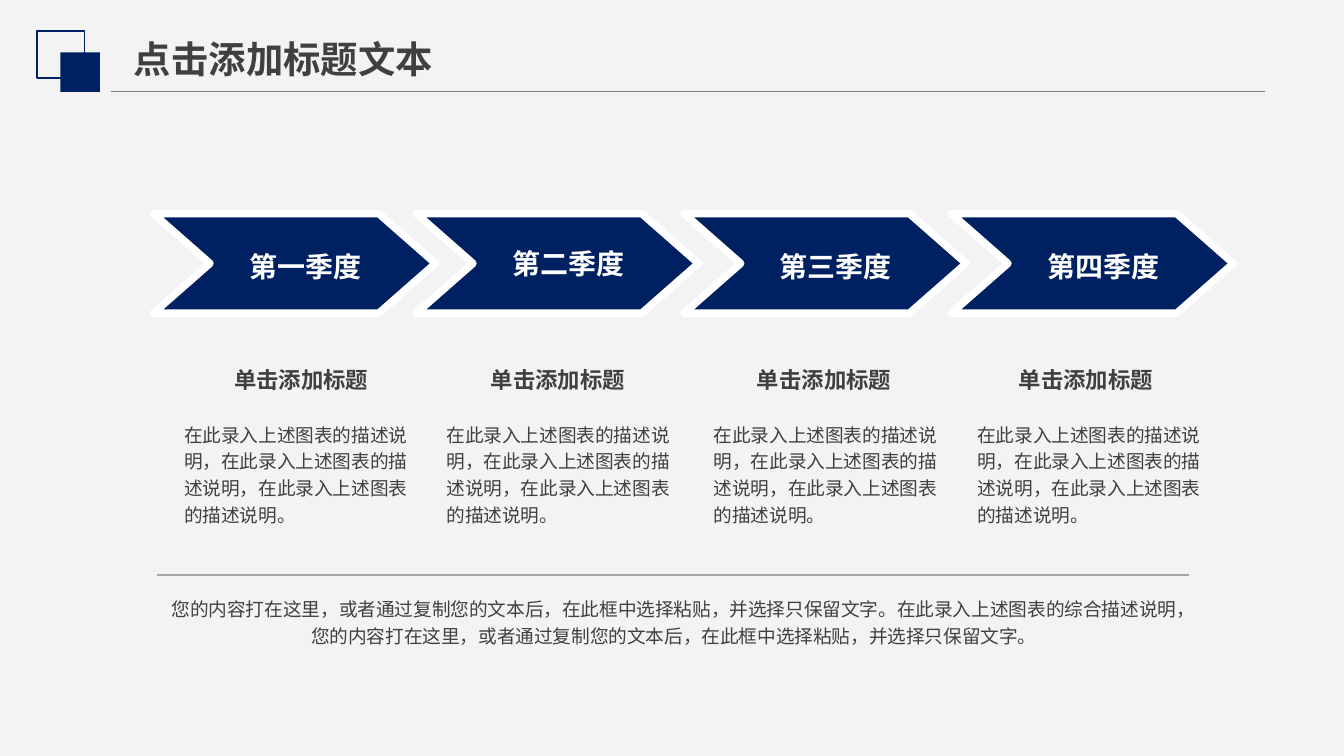
from lxml.etree import SubElement
from pptx import Presentation
from pptx.dml.color import RGBColor
from pptx.enum.shapes import MSO_CONNECTOR, MSO_SHAPE
from pptx.enum.text import MSO_ANCHOR, MSO_AUTO_SIZE, PP_ALIGN
from pptx.oxml.ns import qn
from pptx.util import Cm, Pt

NAVY, WHITE, INK = "002161", "FFFFFF", "404040"
SANS = "Noto Sans CJK SC"
HEADING = "单击添加标题"
DETAIL = "在此录入上述图表的描述说明，" * 2 + "在此录入上述图表的描述说明。"
SUMMARY = (
    "您的内容打在这里，或者通过复制您的文本后，在此框中选择粘贴，并选择只保留文字。"
    "在此录入上述图表的综合描述说明，"
    "您的内容打在这里，或者通过复制您的文本后，在此框中选择粘贴，并选择只保留文字。"
)
QUARTERS = [
    ("第一季度", 2.9, 4.22, 3.3, 1.2),
    ("第二季度", 7.87, 9.07, 8.26, 1.0),
    ("第三季度", 12.93, 14.1, 13.31, 1.2),
    ("第四季度", 17.98, 19.05, 18.29, 1.2),
]


def paint(color_format, value):
    """Set a solid fill or a font colour from a hex string."""
    color_format.rgb = RGBColor.from_string(value)


def write(box, text, size=10, color=INK, font=SANS, bold=False, align=PP_ALIGN.LEFT,
          spacing=1.0, anchor=MSO_ANCHOR.TOP, wrap=True, margins=(0.18, 0.1)):
    """Fill a box with one formatted paragraph."""
    frame = box.text_frame
    frame.word_wrap, frame.auto_size = wrap, MSO_AUTO_SIZE.NONE
    frame.vertical_anchor = anchor
    frame.margin_left = frame.margin_right = Cm(margins[0])
    frame.margin_top = frame.margin_bottom = Cm(margins[1])
    para = frame.paragraphs[0]
    para.alignment, para.line_spacing = align, spacing
    span = para.add_run()
    span.text = text
    span.font.size, span.font.bold = Pt(size), bold
    paint(span.font.color, color)
    span.font.name = font
    SubElement(span.font._element, qn("a:ea"), typeface=SANS)


def add_text(page, left, top, width, height, text, **style):
    """Add a text box and write in it."""
    box = page.shapes.add_textbox(Cm(left), Cm(top), Cm(width), Cm(height))
    write(box, text, **style)


def add_rule(page, left, top, width, color):
    """Draw a thin horizontal rule."""
    rule = page.shapes.add_connector(
        MSO_CONNECTOR.STRAIGHT, Cm(left), Cm(top), Cm(left + width), Cm(top))
    paint(rule.line.color, color)
    rule.line.width = Pt(0.75)
    SubElement(rule._element.spPr, qn("a:effectLst"))


def add_square(page, left, top, side, filled):
    """Draw a filled or an outlined navy square."""
    square = page.shapes.add_shape(
        MSO_SHAPE.RECTANGLE, Cm(left), Cm(top), Cm(side), Cm(side))
    square.shadow.inherit = False
    if filled:
        square.fill.solid()
        paint(square.fill.fore_color, NAVY)
        square.line.fill.background()
    else:
        square.fill.background()
        paint(square.line.color, NAVY)
        square.line.width = Pt(1)


def add_header(page, left, top, width, height):
    """Place the squares, the title and the rule under it."""
    add_square(page, left, top, 0.9, False)
    add_square(page, left + 0.44, top + 0.41, 0.75, True)
    title = page.shapes.title
    title.left, title.top = Cm(left + 1.58), Cm(top - 0.02)
    title.width, title.height = Cm(6.22), Cm(1.12)
    write(title, "点击添加标题文本", size=20, bold=True, wrap=False, margins=(0.25, 0.13))
    add_rule(page, left + 1.4, top + height, width - 1.4, "808080")


def add_arrow(page, left, top, width, height, label, spacing):
    """Draw a notched arrow with its label."""
    notch = 1.07
    right, middle, bottom = left + width, top + height / 2, top + height
    outline = page.shapes.build_freeform(Cm(left), Cm(top))
    corners = [(right - notch, top), (right, middle), (right - notch, bottom),
               (left, bottom), (left + notch, middle)]
    outline.add_line_segments([(Cm(x), Cm(y)) for x, y in corners])
    arrow = outline.convert_to_shape()
    arrow.shadow.inherit = False
    arrow.fill.solid()
    paint(arrow.fill.fore_color, NAVY)
    paint(arrow.line.color, WHITE)
    arrow.line.width = Pt(4)
    SubElement(arrow.line._ln, qn("a:round"))
    add_text(page, left + 0.62, top + 0.46, 4.5, 0.96, label, size=15, color=WHITE,
             font="Arial", bold=True, align=PP_ALIGN.CENTER, spacing=spacing,
             anchor=MSO_ANCHOR.MIDDLE, margins=(0.25, 0.13))


def add_quarters(page, top):
    """Place the four arrows with their headings and details."""
    for label, arrow_left, heading_left, detail_left, spacing in QUARTERS:
        add_arrow(page, arrow_left, top, 5.33, 1.88, label, spacing)
        add_text(page, heading_left, top + 2.79, 2.95, 0.71, HEADING, size=12,
                 bold=True, align=PP_ALIGN.CENTER, wrap=False)
        add_text(page, detail_left, top + 3.78, 4.64, 2.24, DETAIL, spacing=1.2)


def add_summary(page, left, top, width, height):
    """Place the closing rule and the summary below it."""
    add_rule(page, left, top, width, "A6A6A6")
    add_text(page, left - 0.02, top + 0.25, width + 0.06, height, SUMMARY,
             align=PP_ALIGN.CENTER, spacing=1.2)


def main():
    """Build the slide and save the deck."""
    deck = Presentation()
    deck.slide_width, deck.slide_height = Cm(25.4), Cm(14.29)
    page = deck.slides.add_slide(deck.slide_layouts[5])
    page.background.fill.solid()
    paint(page.background.fill.fore_color, "F3F3F3")
    add_header(page, 0.7, 0.58, 23.2, 1.15)
    add_quarters(page, 4.04)
    add_summary(page, 2.97, 10.87, 19.5, 1.22)
    deck.save("out.pptx")


if __name__ == "__main__":
    main()
